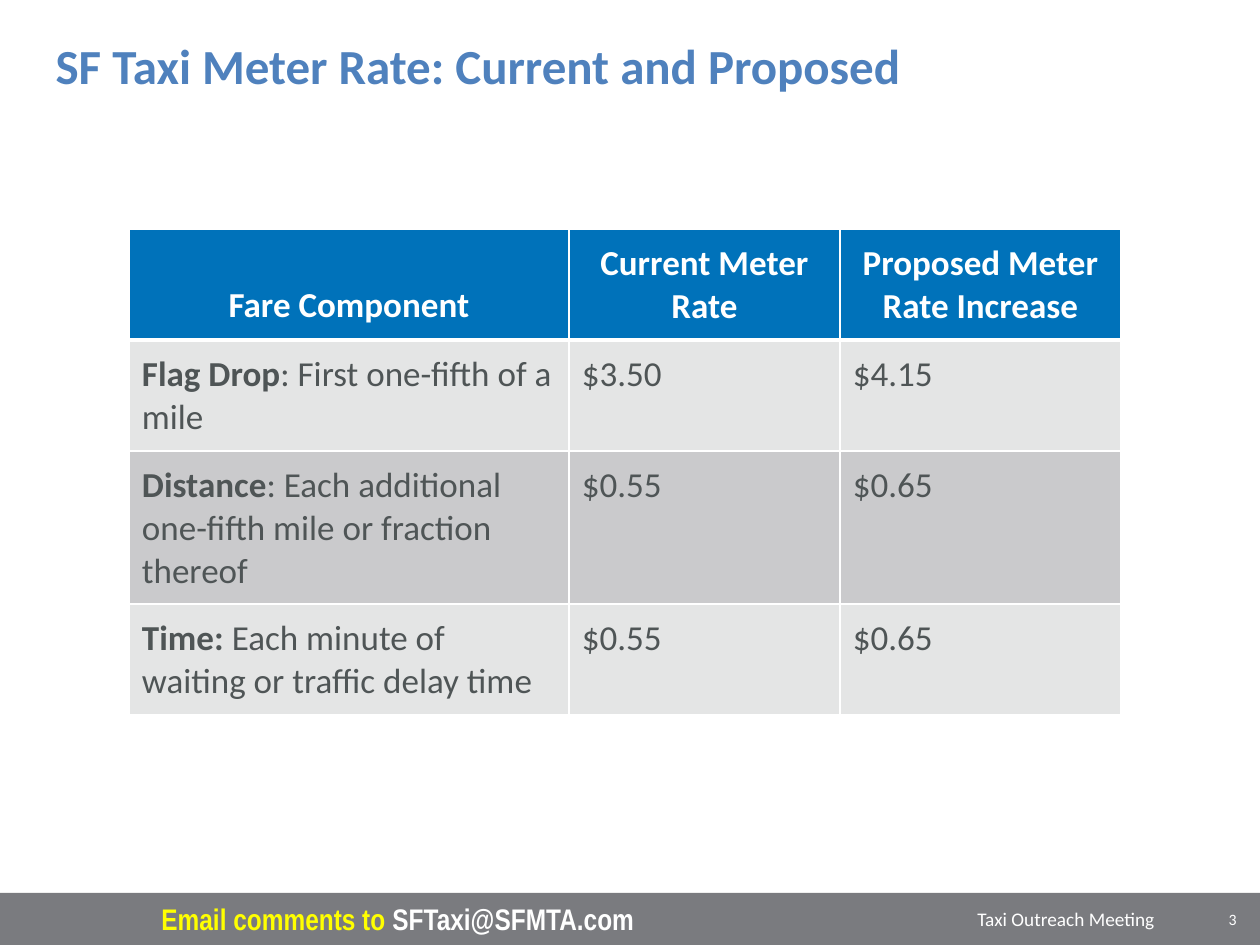
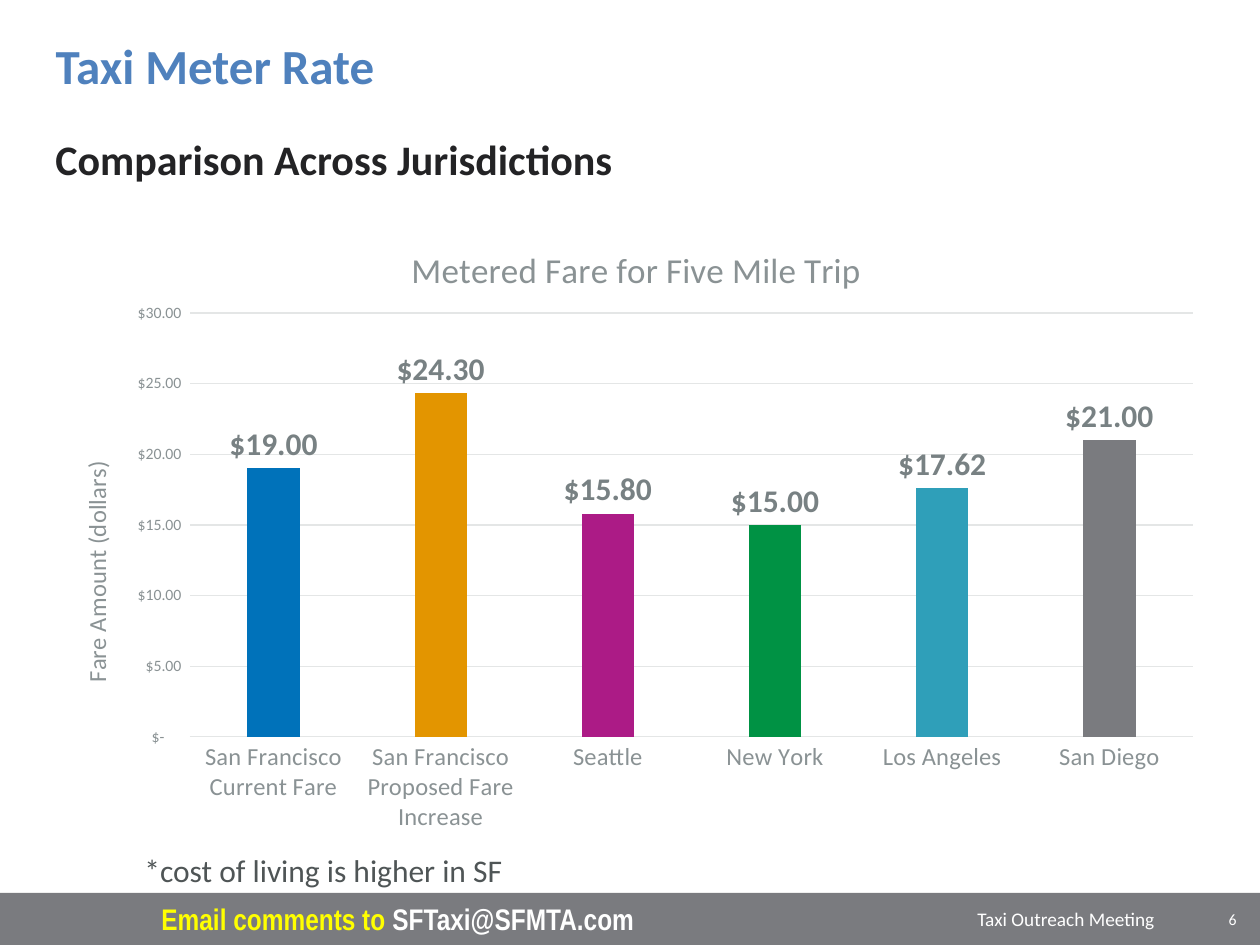
"""Build two slides on taxi meter rates: a fare table and a city comparison chart."""
from lxml import etree
from pptx import Presentation, util as u
from pptx.chart.data import CategoryChartData
from pptx.dml.color import RGBColor
from pptx.enum import chart as ch, shapes, text
from pptx.oxml import parse_xml
from pptx.oxml.ns import nsdecls, qn

BLUE = RGBColor(0x00, 0x72, 0xBA)
TITLE = RGBColor(0x4F, 0x81, 0xBD)
GRAY = RGBColor(0x7A, 0x7B, 0x7F)
WHITE = RGBColor(0xFF, 0xFF, 0xFF)
YELLOW = RGBColor(0xFF, 0xFF, 0x00)
BLACK = RGBColor(0x23, 0x23, 0x25)
BODY = RGBColor(0x4F, 0x55, 0x56)
AXIS = RGBColor(0x8A, 0x92, 0x94)
LABEL = RGBColor(0x78, 0x81, 0x83)
GRID = RGBColor(0xE4, 0xE6, 0xE6)
BANDS = [RGBColor(0xE4, 0xE5, 0xE5), RGBColor(0xCA, 0xCA, 0xCC)]
FONT = "Calibri"
MONEY = '_("$"* #,##0.00_);_("$"* \\(#,##0.00\\);_("$"* "-"??_);_(@_)'

HEADS = ["Fare Component", "Current Meter Rate", "Proposed Meter Rate Increase"]
RATES = [
    (("Flag Drop", ": First one-fifth of a mile"), "$3.50", "$4.15"),
    (("Distance", ": Each additional one-fifth mile or fraction thereof"), "$0.55", "$0.65"),
    (("Time: ", "Each minute of waiting or traffic delay time"), "$0.55", "$0.65"),
]
COLS = [440, 271, 281]
ROWS = [111, 111, 153, 111]
FARES = [
    ("San Francisco Current Fare", 19, BLUE),
    ("San Francisco Proposed Fare Increase", 24.3, RGBColor(0xE3, 0x95, 0x00)),
    ("Seattle", 15.8, RGBColor(0xAC, 0x1B, 0x86)),
    ("New York", 15, RGBColor(0x00, 0x92, 0x44)),
    ("Los Angeles", 17.62, RGBColor(0x2F, 0x9F, 0xB9)),
    ("San Diego", 21, GRAY),
]
CHART = (43, 207, 1173, 638)
PLOT = (190, 313, 1003, 424)


def px(*vals):
    """Turn pixels into EMU."""
    return [round(v * u.Inches(1) / 126) for v in vals]


def style(font, size, color, bold=False, name=FONT):
    """Format one font."""
    font.size, font.bold, font.name = u.Pt(size), bold, name
    font.color.rgb = color


def write(para, *runs):
    """Add (text, size, colour, bold, font) runs to a paragraph."""
    for words, *look in runs:
        run = para.add_run()
        run.text = words
        style(run.font, *look)


def label(slide, box, *runs, anchor=text.MSO_ANCHOR.TOP, align=text.PP_ALIGN.LEFT):
    """Place a one-paragraph text box."""
    frame = slide.shapes.add_textbox(*px(*box)).text_frame
    frame.word_wrap, frame.vertical_anchor = True, anchor
    frame.paragraphs[0].alignment = align
    write(frame.paragraphs[0], *runs)


def base(deck, head, num):
    """Start a slide with its title and footer."""
    slide = deck.slides.add_slide(deck.slide_layouts[5])
    title = slide.shapes.title
    title.left, title.top, title.width, title.height = px(43, 29, 1201, 72)
    frame = title.text_frame
    frame.word_wrap, frame.auto_size = True, text.MSO_AUTO_SIZE.NONE
    frame.vertical_anchor = text.MSO_ANCHOR.TOP
    frame.text = head
    frame.paragraphs[0].alignment = text.PP_ALIGN.LEFT
    style(frame.paragraphs[0].runs[0].font, 28, TITLE, True)

    band = slide.shapes.add_shape(shapes.MSO_SHAPE.RECTANGLE, *px(0, 893, 1260, 52))
    band.shadow.inherit = False
    band.fill.solid()
    band.fill.fore_color.rgb = GRAY
    band.line.fill.background()
    mid = text.MSO_ANCHOR.MIDDLE
    label(slide, (965, 901, 239, 37), ("Taxi Outreach Meeting", 11, WHITE))
    label(slide, (149, 893, 800, 52),
          ("Email comments to ", 17, YELLOW, True, "Arial Narrow"),
          ("SFTaxi@SFMTA.com", 17, WHITE, True, "Arial Narrow"), anchor=mid)
    label(slide, (1173, 893, 76, 52), (str(num), 9, WHITE),
          anchor=mid, align=text.PP_ALIGN.RIGHT)
    return slide


def paint(cell, color, top, low):
    """Give a cell its margins, white borders and fill."""
    cell.margin_left = cell.margin_right = cell.margin_top = cell.margin_bottom = px(13)[0]
    props = cell._tc.get_or_add_tcPr()
    for side, wide in zip("LRTB", (1, 1, top, low)):
        props.append(parse_xml(
            f'<a:ln{side} {nsdecls("a")} w="{u.Pt(wide)}"><a:solidFill>'
            f'<a:srgbClr val="{WHITE}"/></a:solidFill></a:ln{side}>'))
    cell.fill.solid()
    cell.fill.fore_color.rgb = color


def rates(slide):
    """Draw the fare table."""
    box = px(129, 229, sum(COLS), sum(ROWS))
    grid = slide.shapes.add_table(len(ROWS), len(COLS), *box).table
    for col, wide in zip(grid.columns, px(*COLS)):
        col.width = wide
    for row, high in zip(grid.rows, px(*ROWS)):
        row.height = high
    for c, head in enumerate(HEADS):
        cell = grid.cell(0, c)
        paint(cell, BLUE, 1, 3)
        cell.vertical_anchor = text.MSO_ANCHOR.BOTTOM
        para = cell.text_frame.paragraphs[0]
        para.alignment = text.PP_ALIGN.CENTER
        write(para, (head, 20, WHITE, True))
    for r, ((name, rest), *costs) in enumerate(RATES, 1):
        parts = [[(name, 20, BODY, True), (rest, 20, BODY)]]
        parts += [[(cost, 20, BODY)] for cost in costs]
        for c, runs in enumerate(parts):
            cell = grid.cell(r, c)
            paint(cell, BANDS[(r - 1) % 2], 3 if r == 1 else 1, 1)
            write(cell.text_frame.paragraphs[0], *runs)


def place(node, left, top, wide=None, high=None):
    """Fix a chart part at a spot given in slide pixels."""
    x, y, w, h = CHART
    spot = {"xMode": "edge", "yMode": "edge", "x": (left - x) / w, "y": (top - y) / h}
    if wide:
        spot = {"layoutTarget": "inner", **spot, "w": wide / w, "h": high / h}
    for old in node.findall(qn("c:layout")):
        node.remove(old)
    lay = etree.Element(qn("c:layout"))
    man = etree.SubElement(lay, qn("c:manualLayout"))
    for key, val in spot.items():
        val = val if isinstance(val, str) else f"{val:.4f}"
        etree.SubElement(man, qn("c:" + key)).set("val", val)
    tx = node.find(qn("c:tx"))
    node.insert(0 if tx is None else node.index(tx) + 1, lay)


def head(owner, words, size, left, top):
    """Title a chart or an axis."""
    title = owner.chart_title if hasattr(owner, "chart_title") else owner.axis_title
    write(title.text_frame.paragraphs[0], (words, size, AXIS))
    place(title._element, left, top)


def fares(slide):
    """Draw the fare chart."""
    data = CategoryChartData(number_format=MONEY)
    data.categories = [name for name, _, _ in FARES]
    data.add_series("Series 1", [fare for _, fare, _ in FARES])
    kind = ch.XL_CHART_TYPE.COLUMN_CLUSTERED
    chart = slide.shapes.add_chart(kind, *px(*CHART), data).chart
    style(chart.font, 10, BODY)
    chart.has_legend = False
    head(chart, "Metered Fare for Five Mile Trip", 20, 405, 239)
    chart.chart_title.include_in_layout = False

    cat, val = chart.category_axis, chart.value_axis
    for axis, size in ((cat, 14), (val, 9)):
        axis.major_tick_mark = axis.minor_tick_mark = ch.XL_TICK_MARK.NONE
        style(axis.tick_labels.font, size, AXIS)
    head(val, "Fare Amount (dollars)", 14, 75, 457)
    val.minimum_scale, val.maximum_scale, val.major_unit = 0, 30, 5
    val.tick_labels.number_format = MONEY
    val.tick_labels.number_format_is_linked = False
    val.format.line.fill.background()
    for line in (cat.format.line, val.major_gridlines.format.line):
        line.color.rgb, line.width = GRID, u.Pt(0.75)

    plot = chart.plots[0]
    plot.gap_width, plot.overlap, plot.vary_by_categories = 219, -27, False
    for i, (_, _, color) in enumerate(FARES):
        fill = plot.series[0].points[i].format.fill
        fill.solid()
        fill.fore_color.rgb = color
    plot.has_data_labels = True
    tags = plot.data_labels
    tags.show_value, tags.position = True, ch.XL_LABEL_POSITION.OUTSIDE_END
    tags.number_format, tags.number_format_is_linked = MONEY, False
    style(tags.font, 18, LABEL, True)
    place(chart._chartSpace.chart.plotArea, *PLOT)


def main():
    """Build and save the deck."""
    deck = Presentation()
    deck.slide_width, deck.slide_height = px(1260, 945)
    rates(base(deck, "SF Taxi Meter Rate: Current and Proposed", 3))
    slide = base(deck, "Taxi Meter Rate", 6)
    label(slide, (43, 127, 1201, 72), ("Comparison Across Jurisdictions", 24, BLACK, True))
    fares(slide)
    label(slide, (132, 845, 436, 50), ("*cost of living is higher in SF", 18, BODY))
    deck.save("out.pptx")


if __name__ == "__main__":
    main()
